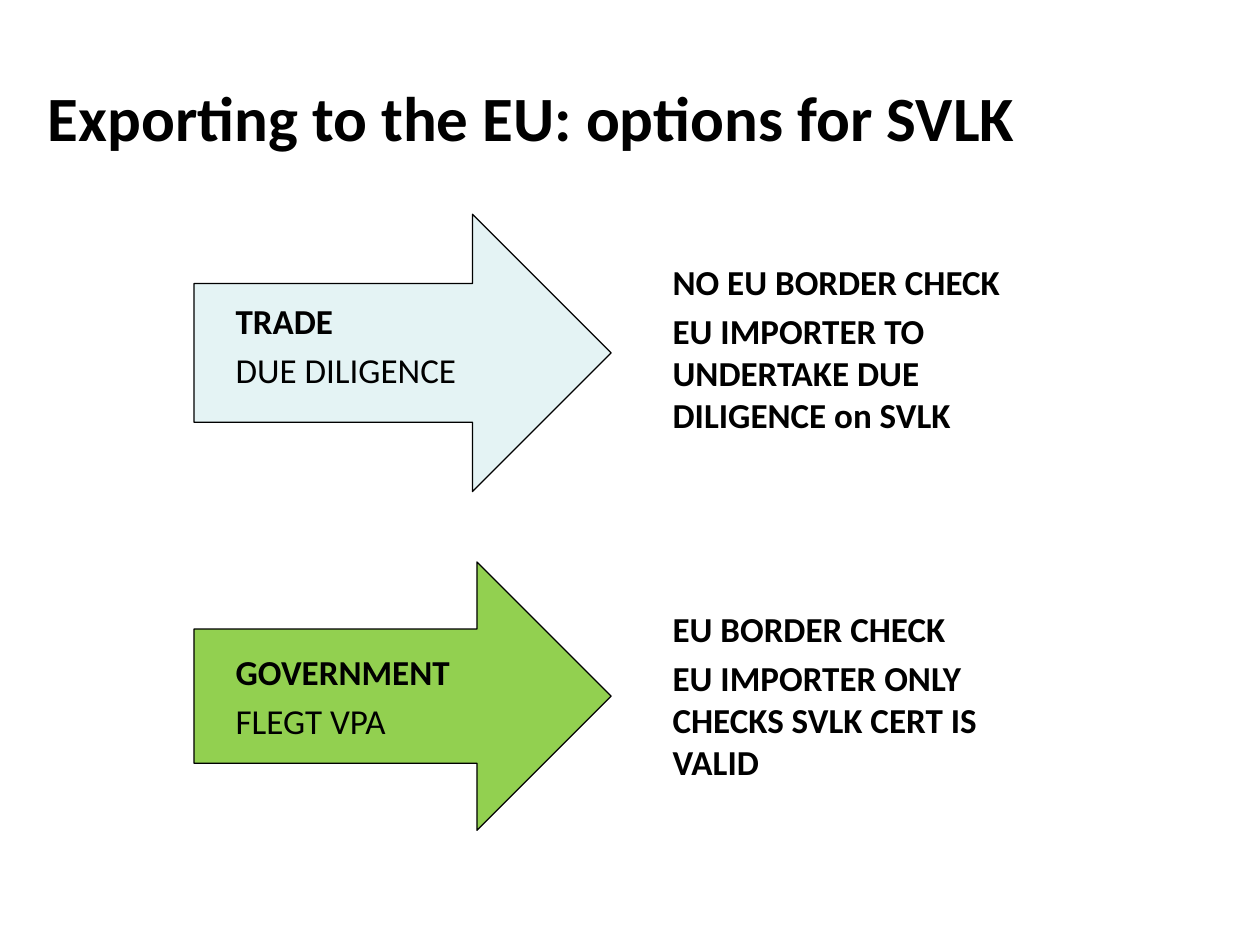
"""Build a slide comparing the trade and government options for exporting to the EU."""
import pptx
import pptx.dml.color
import pptx.enum.shapes
import pptx.enum.text
import pptx.util

Cm = pptx.util.Cm


def color(value):
    return pptx.dml.color.RGBColor.from_string(value)


def write(frame, *lines, size=20, bold=(True, True), anchor=pptx.enum.text.MSO_ANCHOR.TOP):
    frame.word_wrap = True
    frame.auto_size = pptx.enum.text.MSO_AUTO_SIZE.NONE
    frame.vertical_anchor = anchor
    for index, line in enumerate(lines):
        para = frame.add_paragraph() if index else frame.paragraphs[0]
        para.alignment = pptx.enum.text.PP_ALIGN.LEFT
        para.space_before = pptx.util.Pt(4 if index else 0)
        span = para.add_run()
        span.text = line
        span.font.name = "Calibri"
        span.font.size = pptx.util.Pt(size)
        span.font.bold = bold[index]
        span.font.color.rgb = color("000000")


deck = pptx.Presentation()
deck.slide_width, deck.slide_height = Cm(25.4), Cm(19.05)
page = deck.slides.add_slide(deck.slide_layouts[5])

title = page.shapes.title
title.left, title.top, title.width, title.height = Cm(0.71), Cm(0.74), Cm(20.4), Cm(3.2)
write(title.text_frame, "Exporting to the EU: options for SVLK", size=36,
      anchor=pptx.enum.text.MSO_ANCHOR.MIDDLE)

options = [
    {"fill": "E4F3F4", "arrow": (4.32, 5.59),
     "label": (5.92, 7.19, "TRADE", "DUE DILIGENCE"),
     "result": (5.13, 8.61, "NO EU BORDER CHECK",
                "EU IMPORTER TO UNDERTAKE DUE DILIGENCE on SVLK")},
    {"fill": "92D050", "arrow": (11.33, 5.41),
     "label": (12.98, 6.6, "GOVERNMENT", "FLEGT VPA"),
     "result": (12.12, 7.59, "EU BORDER CHECK",
                "EU IMPORTER ONLY CHECKS SVLK CERT IS VALID")},
]

for option in options:
    top, height = option["arrow"]
    arrow = page.shapes.add_shape(pptx.enum.shapes.MSO_SHAPE.RIGHT_ARROW,
                                  Cm(3.91), Cm(top), Cm(8.41), Cm(height))
    arrow.shadow.inherit = False
    arrow.fill.solid()
    arrow.fill.fore_color.rgb = color(option["fill"])
    arrow.line.color.rgb = color("000000")
    arrow.line.width = pptx.util.Pt(0.75)

    for part, left, height, bold in [("label", 4.5, 2.13, (True, False)),
                                     ("result", 13.31, 3.84, (True, True))]:
        top, width, *lines = option[part]
        box = page.shapes.add_textbox(Cm(left), Cm(top), Cm(width), Cm(height))
        write(box.text_frame, *lines, bold=bold)

deck.save("out.pptx")
